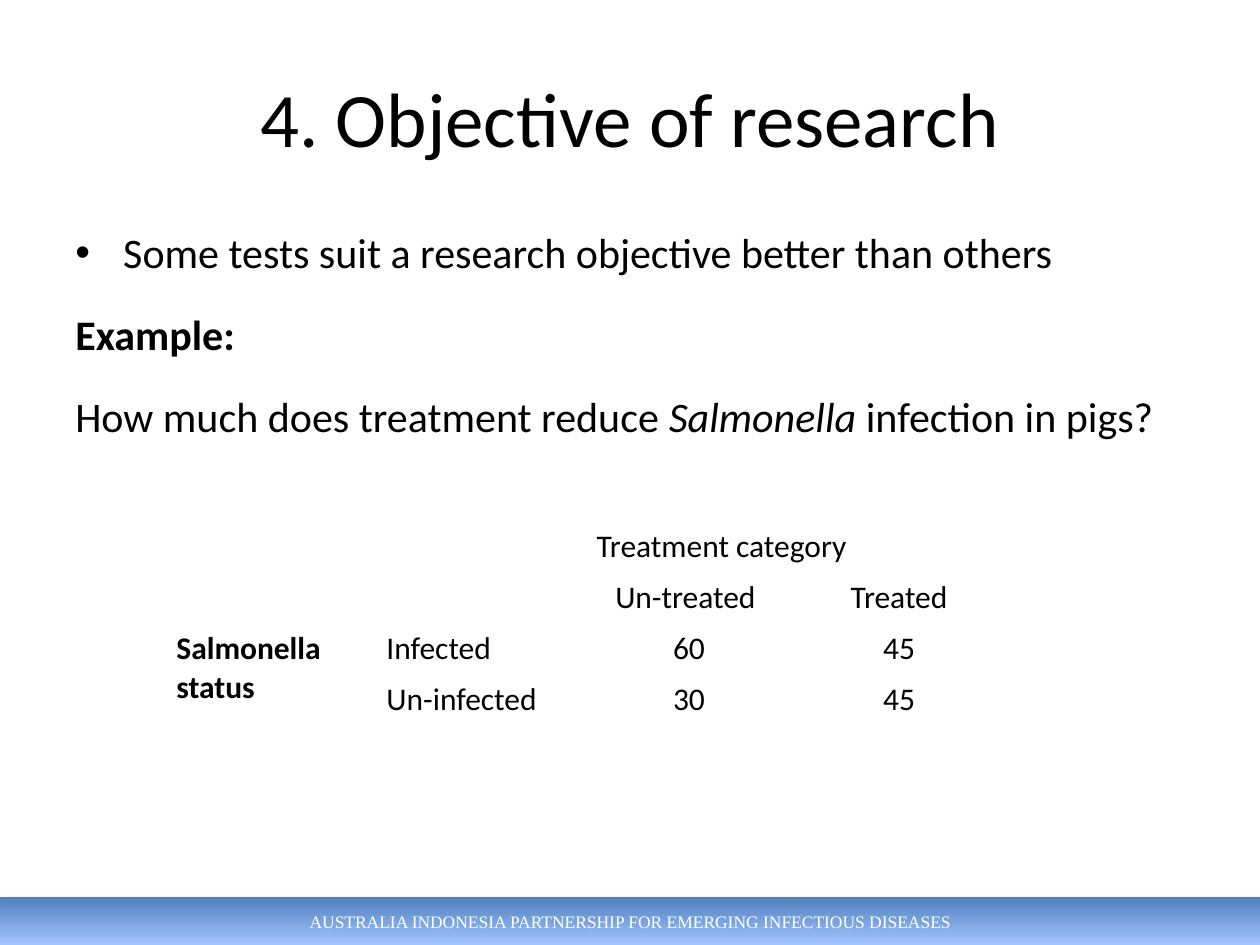
from dataclasses import dataclass

from lxml.etree import SubElement
from pptx import Presentation
from pptx.dml.color import RGBColor
from pptx.enum.shapes import MSO_SHAPE as Shape
from pptx.enum.text import MSO_ANCHOR as Anchor, PP_ALIGN as Align
from pptx.oxml.ns import qn
from pptx.util import Inches, Pt

COLORS = {
    "text": "000000",
    "white": "FFFFFF",
    "band_top": "4F81BD",
    "band_bottom": "A4C4FF",
}
BODY_FONT = "Calibri"
BULLET_INDENT = Inches(0.38)


@dataclass(frozen=True)
class Span:
    text: str
    bold: bool = False
    italic: bool = False


@dataclass(frozen=True)
class Statement:
    spans: tuple[Span, ...]
    bulleted: bool = False


@dataclass(frozen=True)
class Entry:
    row: int
    col: int
    text: str
    centered: bool = True
    bold: bool = False


STATEMENTS = (
    Statement((Span("Some tests suit a research objective better than others"),), bulleted=True),
    Statement((Span("Example:", bold=True),)),
    Statement((
        Span("How much does treatment reduce "),
        Span("Salmonella", italic=True),
        Span(" infection in pigs?"),
    )),
)

ENTRIES = (
    Entry(0, 2, "Treatment category", centered=False),
    Entry(1, 2, "Un-treated "),
    Entry(1, 3, "Treated"),
    Entry(2, 0, "Salmonella status", centered=False, bold=True),
    Entry(2, 1, "Infected", centered=False),
    Entry(2, 2, "60"),
    Entry(2, 3, "45"),
    Entry(3, 1, "Un-infected", centered=False),
    Entry(3, 2, "30"),
    Entry(3, 3, "45"),
)


def rgb(name: str) -> RGBColor:
    return RGBColor.from_string(COLORS[name])


def add_run(paragraph, span: Span, size: float, color: str = "text", font: str = BODY_FONT) -> None:
    run = paragraph.add_run()
    run.text = span.text
    run.font.name = font
    run.font.size = Pt(size)
    run.font.bold = span.bold
    run.font.italic = span.italic
    run.font.color.rgb = rgb(color)


def add_bullet(paragraph) -> None:
    properties = paragraph._p.get_or_add_pPr()
    properties.set("marL", str(BULLET_INDENT))
    properties.set("indent", str(-BULLET_INDENT))
    SubElement(properties, qn("a:buFont"), typeface="Arial")
    SubElement(properties, qn("a:buChar"), char="•")


def add_soft_shadow(shape) -> None:
    shape.shadow.inherit = False
    effects = shape._element.spPr.find(qn("a:effectLst"))
    shadow = SubElement(effects, qn("a:outerShdw"), blurRad=str(Pt(3.1)), dist=str(Pt(1.8)),
                        dir="5400000", rotWithShape="0")
    shade = SubElement(shadow, qn("a:srgbClr"), val=COLORS["text"])
    SubElement(shade, qn("a:alpha"), val="35000")


def add_footer(slide) -> None:
    band = slide.shapes.add_shape(Shape.RECTANGLE, 0, Inches(7.12), Inches(10), Inches(0.38))
    band.fill.gradient()
    band.fill.gradient_angle = 270
    for stop, color in zip(band.fill.gradient_stops, ("band_top", "band_bottom")):
        stop.color.rgb = rgb(color)
    band.line.fill.background()
    add_soft_shadow(band)
    band.text_frame.vertical_anchor = Anchor.MIDDLE
    label = band.text_frame.paragraphs[0]
    label.alignment = Align.CENTER
    add_run(label, Span("AUSTRALIA INDONESIA PARTNERSHIP FOR EMERGING INFECTIOUS DISEASES"),
            10, "white", "Times New Roman")


def add_title(slide) -> None:
    box = slide.shapes.add_textbox(Inches(0.5), Inches(0.3), Inches(9), Inches(1.25))
    box.text_frame.word_wrap = True
    box.text_frame.vertical_anchor = Anchor.MIDDLE
    heading = box.text_frame.paragraphs[0]
    heading.alignment = Align.CENTER
    add_run(heading, Span("4. Objective of research"), 44)


def add_statements(slide) -> None:
    box = slide.shapes.add_textbox(Inches(0.5), Inches(1.75), Inches(9), Inches(4.95))
    frame = box.text_frame
    frame.word_wrap = True
    for index, statement in enumerate(STATEMENTS):
        paragraph = frame.add_paragraph() if index else frame.paragraphs[0]
        if index:
            paragraph.space_before = Pt(6)
        paragraph.space_after = Pt(12)
        if statement.bulleted:
            add_bullet(paragraph)
        for span in statement.spans:
            add_run(paragraph, span, 24)


def style_cell(cell, bottom_width: float) -> None:
    """Give the cell white borders and no fill."""
    properties = cell._tc.get_or_add_tcPr()
    for side, width in (("L", 1), ("R", 1), ("T", 1), ("B", bottom_width)):
        line = SubElement(properties, qn(f"a:ln{side}"), w=str(Pt(width)))
        fill = SubElement(line, qn("a:solidFill"))
        SubElement(fill, qn("a:srgbClr"), val=COLORS["white"])
    cell.fill.background()


def add_results_table(slide) -> None:
    table = slide.shapes.add_table(4, 4, Inches(1.3), Inches(4.14),
                                   Inches(6.67), Inches(1.62)).table
    table.first_row = False
    table.horz_banding = False
    for row_index, row in enumerate(table.rows):
        for cell in row.cells:
            style_cell(cell, 1 if row_index else 3)
    table.cell(0, 2).merge(table.cell(0, 3))
    table.cell(2, 0).merge(table.cell(3, 0))
    for entry in ENTRIES:
        paragraph = table.cell(entry.row, entry.col).text_frame.paragraphs[0]
        paragraph.alignment = Align.CENTER if entry.centered else Align.LEFT
        add_run(paragraph, Span(entry.text, bold=entry.bold), 18)


def main() -> None:
    deck = Presentation()
    deck.slide_width, deck.slide_height = Inches(10), Inches(7.5)
    slide = deck.slides.add_slide(deck.slide_layouts[6])
    add_footer(slide)
    add_title(slide)
    add_statements(slide)
    add_results_table(slide)
    deck.save("out.pptx")


if __name__ == "__main__":
    main()
